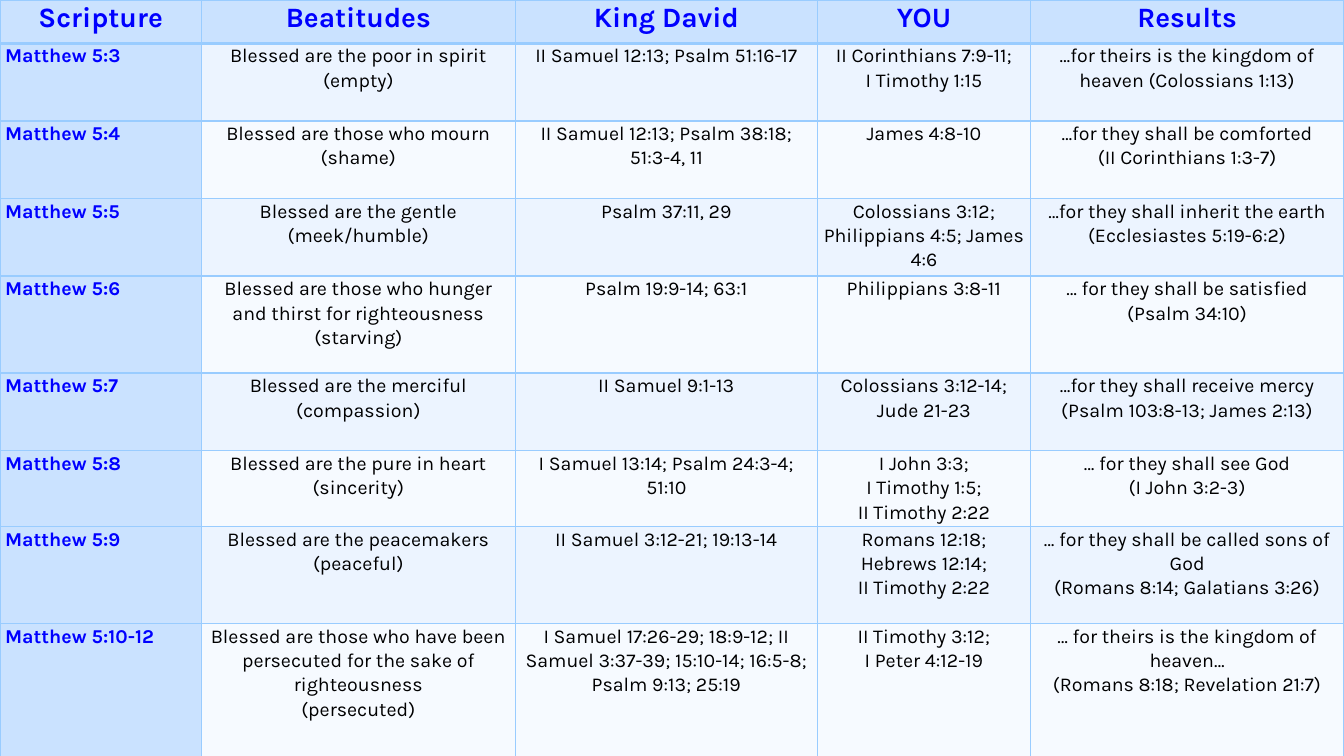
from dataclasses import dataclass

from lxml import etree
from pptx import Presentation
from pptx import table as tables
from pptx import util as u
from pptx.dml import color
from pptx.enum import text
from pptx.oxml import ns


@dataclass(frozen=True)
class Theme:
    font: str = "Karla"
    heading_size: int = 20
    body_size: int = 14
    line_spacing: float = 1.07
    accent: str = "0000FF"
    ink: str = "000000"
    grid: str = "99CCFF"
    heading_fill: str = "CAE2FF"
    band_fills: tuple[str, str] = ("ECF4FF", "F6FAFF")
    thin_line: int = 1
    thick_line: int = 3


@dataclass(frozen=True)
class Beatitude:
    """One body row; a newline in a field starts a new paragraph."""
    height: float
    scripture: str
    blessing: str
    david: str
    you: str
    result: str

    def texts(self) -> tuple[str, ...]:
        return self.scripture, self.blessing, self.david, self.you, self.result


@dataclass(frozen=True)
class CellStyle:
    fill: str
    ink: str
    size: int
    bold: bool
    alignment: text.PP_ALIGN
    top_line: int
    bottom_line: int


THEME = Theme()
COLUMN_WIDTHS = (144, 224, 216, 152, 224)
HEADING_HEIGHT = 31
HEADINGS = ("Scripture", "Beatitudes", "King David", "YOU", "Results")
BEATITUDES = (
    Beatitude(55.4, "Matthew 5:3", "Blessed are the poor in spirit (empty)",
              "II Samuel 12:13; Psalm 51:16-17",
              "II Corinthians 7:9-11;\nI Timothy 1:15",
              "…for theirs is the kingdom of heaven (Colossians 1:13)"),
    Beatitude(55.4, "Matthew 5:4", "Blessed are those who mourn (shame)",
              "II Samuel 12:13; Psalm 38:18; 51:3-4, 11", "James 4:8-10",
              "…for they shall be comforted\n(II Corinthians 1:3-7)"),
    Beatitude(55.4, "Matthew 5:5", "Blessed are the gentle (meek/humble)",
              "Psalm 37:11, 29",
              "Colossians 3:12; Philippians 4:5; James 4:6",
              "…for they shall inherit the earth (Ecclesiastes 5:19-6:2)"),
    Beatitude(69.3, "Matthew 5:6",
              "Blessed are those who hunger and thirst for righteousness (starving)",
              "Psalm 19:9-14; 63:1", "Philippians 3:8-11",
              "… for they shall be satisfied (Psalm 34:10)"),
    Beatitude(55.4, "Matthew 5:7", "Blessed are the merciful (compassion)",
              "II Samuel 9:1-13", "Colossians 3:12-14; Jude 21-23",
              "…for they shall receive mercy (Psalm 103:8-13; James 2:13)"),
    Beatitude(54.3, "Matthew 5:8", "Blessed are the pure in heart (sincerity)",
              "I Samuel 13:14; Psalm 24:3-4; 51:10",
              "I John 3:3;\nI Timothy 1:5;\nII Timothy 2:22",
              "… for they shall see God\n(I John 3:2-3)"),
    Beatitude(69.3, "Matthew 5:9", "Blessed are the peacemakers (peaceful)",
              "II Samuel 3:12-21; 19:13-14",
              "Romans 12:18; Hebrews 12:14;\nII Timothy 2:22",
              "… for they shall be called sons of God\n(Romans 8:14; Galatians 3:26)"),
    Beatitude(97.2, "Matthew 5:10-12",
              "Blessed are those who have been persecuted for the sake of "
              "righteousness\n(persecuted)",
              "I Samuel 17:26-29; 18:9-12; II Samuel 3:37-39; 15:10-14; "
              "16:5-8; Psalm 9:13; 25:19",
              "II Timothy 3:12;\nI Peter 4:12-19",
              "… for theirs is the kingdom of heaven…\n(Romans 8:18; Revelation 21:7)"),
)


def rgb(value: str) -> color.RGBColor:
    return color.RGBColor.from_string(value)


def apply_format(target: object, values: dict[str, object]) -> None:
    for name, value in values.items():
        setattr(target, name, value)


def cell_style(row: int, column: int) -> CellStyle:
    is_heading, is_scripture = row == 0, column == 0
    emphasised = is_heading or is_scripture
    return CellStyle(
        fill=THEME.heading_fill if emphasised else THEME.band_fills[(row - 1) % 2],
        ink=THEME.accent if emphasised else THEME.ink,
        size=THEME.heading_size if is_heading else THEME.body_size,
        bold=emphasised,
        alignment=(text.PP_ALIGN.LEFT if is_scripture and not is_heading
                   else text.PP_ALIGN.CENTER),
        top_line=THEME.thick_line if row == 1 else THEME.thin_line,
        bottom_line=THEME.thick_line if is_heading else THEME.thin_line,
    )


def add_borders(cell: tables._Cell, style: CellStyle) -> None:
    properties = cell._tc.get_or_add_tcPr()
    widths = {"lnL": THEME.thin_line, "lnR": THEME.thin_line,
              "lnT": style.top_line, "lnB": style.bottom_line}
    for side, width in widths.items():
        line = etree.SubElement(properties, ns.qn(f"a:{side}"), w=str(u.Pt(width)))
        fill = etree.SubElement(line, ns.qn("a:solidFill"))
        etree.SubElement(fill, ns.qn("a:srgbClr"), val=THEME.grid)


def fill_cell(cell: tables._Cell, content: str, style: CellStyle) -> None:
    apply_format(cell, {
        "text": content,
        "margin_left": u.Pt(3.6), "margin_right": u.Pt(3.6),
        "margin_top": u.Pt(0), "margin_bottom": u.Pt(0),
        "vertical_anchor": text.MSO_ANCHOR.TOP,
    })
    add_borders(cell, style)
    cell.fill.solid()
    cell.fill.fore_color.rgb = rgb(style.fill)
    for paragraph in cell.text_frame.paragraphs:
        apply_format(paragraph, {"alignment": style.alignment,
                                 "line_spacing": THEME.line_spacing})
        for run in paragraph.runs:
            apply_format(run.font, {"name": THEME.font, "size": u.Pt(style.size),
                                    "bold": style.bold})
            run.font.color.rgb = rgb(style.ink)


def main() -> None:
    presentation = Presentation()
    apply_format(presentation, {"slide_width": u.Pt(960), "slide_height": u.Pt(540)})
    slide = presentation.slides.add_slide(presentation.slide_layouts[6])
    slide.background.fill.solid()
    slide.background.fill.fore_color.rgb = rgb(THEME.grid)

    heights = [HEADING_HEIGHT] + [beatitude.height for beatitude in BEATITUDES]
    rows = [HEADINGS] + [beatitude.texts() for beatitude in BEATITUDES]
    table = slide.shapes.add_table(
        len(rows), len(COLUMN_WIDTHS), u.Pt(0), u.Pt(0),
        u.Pt(sum(COLUMN_WIDTHS)), u.Pt(sum(heights))).table
    apply_format(table, {"first_row": False, "horz_banding": False})
    for column, width in zip(table.columns, COLUMN_WIDTHS):
        column.width = u.Pt(width)
    for row, height in zip(table.rows, heights):
        row.height = u.Pt(height)
    for row_index, contents in enumerate(rows):
        for column_index, content in enumerate(contents):
            fill_cell(table.cell(row_index, column_index), content,
                      cell_style(row_index, column_index))

    presentation.save("out.pptx")


if __name__ == "__main__":
    main()
